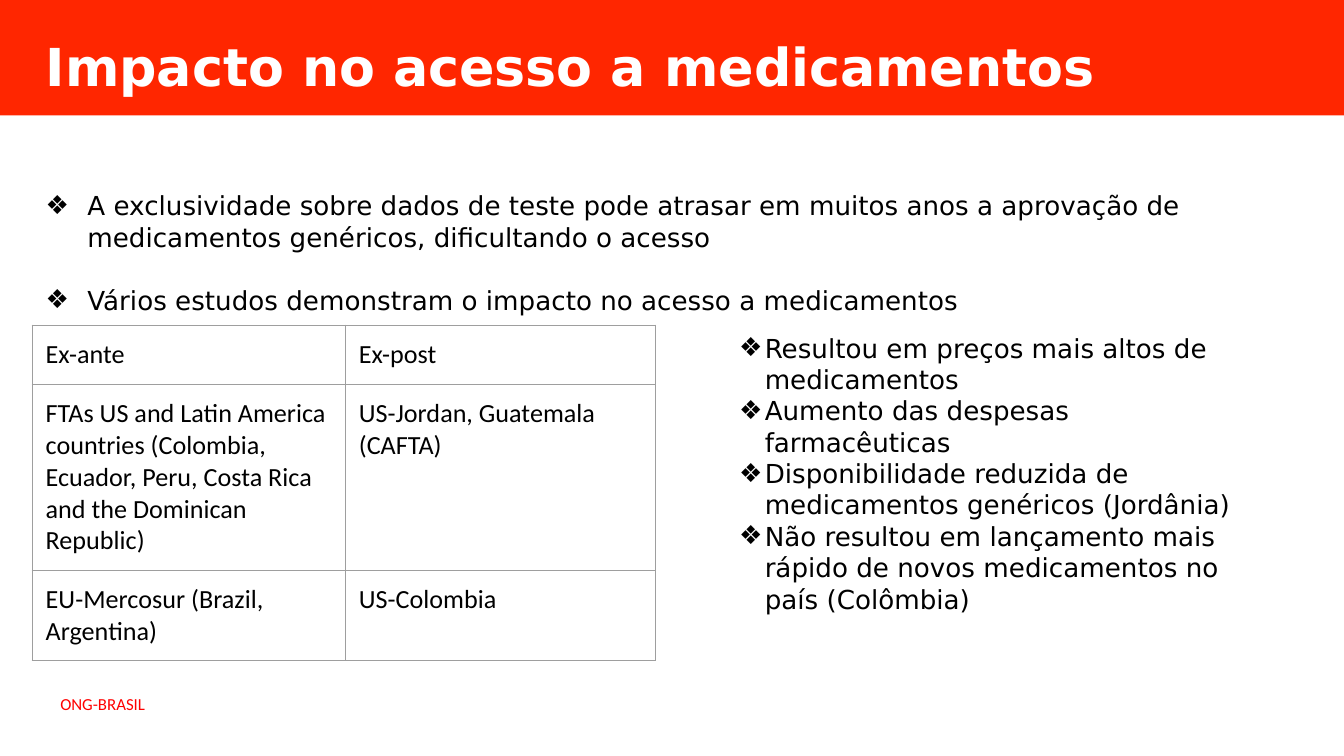
from lxml import etree
from pptx import Presentation
from pptx.dml.color import RGBColor
from pptx.enum.shapes import MSO_SHAPE
from pptx.enum.text import MSO_ANCHOR, MSO_AUTO_SIZE, PP_ALIGN
from pptx.oxml.ns import qn
from pptx.util import Inches, Pt

RECT = MSO_SHAPE.RECTANGLE
TOP, MIDDLE = MSO_ANCHOR.TOP, MSO_ANCHOR.MIDDLE
NO_FIT = MSO_AUTO_SIZE.NONE
LEFT = PP_ALIGN.LEFT

BAND_RED = RGBColor(0xFF, 0x26, 0x00)
FOOTER_RED = RGBColor(0xFF, 0x00, 0x00)
WHITE = RGBColor(0xFF, 0xFF, 0xFF)
BLACK = RGBColor(0x00, 0x00, 0x00)
GRID_GREY = RGBColor(0x9E, 0x9E, 0x9E)

HEADING_FONT = "DejaVu Sans"
TABLE_FONT = "Calibri"

MAIN_POINTS = [
    "A exclusividade sobre dados de teste pode atrasar em muitos anos a aprovação de "
    "medicamentos genéricos, dificultando o acesso ",
    "Vários estudos demonstram o impacto no acesso a medicamentos",
]
FINDINGS = [
    "Resultou em preços mais altos de medicamentos ",
    "Aumento das despesas farmacêuticas",
    "Disponibilidade reduzida de medicamentos genéricos (Jordânia) ",
    "Não resultou em lançamento mais rápido de novos medicamentos no país (Colômbia)",
]
STUDIES = [
    ("Ex-ante", "Ex-post"),
    ("FTAs US and Latin America countries (Colombia, Ecuador, Peru, Costa Rica "
     "and the Dominican Republic)", "US-Jordan, Guatemala (CAFTA)"),
    ("EU-Mercosur (Brazil, Argentina)", "US-Colombia"),
]
COLUMN_WIDTHS = [2.33, 2.31]
ROW_HEIGHTS = [0.44, 1.38, 0.67]


def add_bullet(p, indent):
    """Give a paragraph a black diamond bullet with a hanging indent."""
    pPr = p._p.get_or_add_pPr()
    pPr.set("marL", str(Inches(indent)))
    pPr.set("indent", str(-Inches(indent)))
    color = etree.SubElement(pPr, qn("a:buClr"))
    etree.SubElement(color, qn("a:srgbClr"), val=str(BLACK))
    etree.SubElement(pPr, qn("a:buChar"), char="❖")


def write_text(tf, lines, font=HEADING_FONT, size=14, color=BLACK, bold=False,
               indent=None, gap=0):
    """Write one paragraph per line, with optional bullets and gaps."""
    for i, line in enumerate(lines):
        p = tf.paragraphs[0] if i == 0 else tf.add_paragraph()
        if indent:
            add_bullet(p, indent)
        p.alignment = LEFT
        p.line_spacing = 1.0
        p.space_before = Pt(gap if i else 0)
        r = p.add_run()
        r.text = line
        r.font.name = font
        r.font.size = Pt(size)
        r.font.bold = bold
        r.font.color.rgb = color


def place_text(sp, x, y, w, h, lines, anchor=TOP, inset=0.05, **text_format):
    """Move a text shape, set up its frame and fill it."""
    sp.left, sp.top, sp.width, sp.height = map(Inches, (x, y, w, h))
    tf = sp.text_frame
    tf.word_wrap = True
    tf.auto_size = NO_FIT
    tf.vertical_anchor = anchor
    tf.margin_top = Inches(inset)
    write_text(tf, lines, **text_format)


def add_band(slide):
    """Add the red title band behind everything else."""
    sp = slide.shapes.add_shape(RECT, 0, 0, Inches(10), Inches(0.86))
    sp.shadow.inherit = False
    sp.fill.solid()
    sp.fill.fore_color.rgb = BAND_RED
    sp.line.fill.background()
    slide.shapes._spTree.insert(2, sp._element)


def add_borders(cell):
    """Draw a thin grey line on all four sides of a cell."""
    tcPr = cell._tc.get_or_add_tcPr()
    for side in ("lnL", "lnR", "lnT", "lnB"):
        ln = etree.SubElement(tcPr, qn(f"a:{side}"), w=str(Pt(0.75)))
        fill = etree.SubElement(ln, qn("a:solidFill"))
        etree.SubElement(fill, qn("a:srgbClr"), val=str(GRID_GREY))


def add_studies_table(slide, x, y):
    """Add the table of studies with plain bordered cells."""
    table = slide.shapes.add_table(
        len(ROW_HEIGHTS), len(COLUMN_WIDTHS), Inches(x), Inches(y),
        Inches(sum(COLUMN_WIDTHS)), Inches(sum(ROW_HEIGHTS))).table
    table.first_row = False
    table.horz_banding = False
    for column, width in zip(table.columns, COLUMN_WIDTHS):
        column.width = Inches(width)
    for row, height, texts in zip(table.rows, ROW_HEIGHTS, STUDIES):
        row.height = Inches(height)
        for cell, text in zip(row.cells, texts):
            add_borders(cell)
            cell.fill.background()
            cell.margin_left = cell.margin_right = Inches(0.1)
            cell.margin_top = cell.margin_bottom = Inches(0.1)
            write_text(cell.text_frame, [text], font=TABLE_FONT)


def main():
    """Build the slide and save it."""
    prs = Presentation()
    prs.slide_width, prs.slide_height = Inches(10), Inches(10 * 9 / 16)
    slide = prs.slides.add_slide(prs.slide_layouts[3])
    title, main_list, findings_list = slide.placeholders

    add_band(slide)
    footer = slide.shapes.add_textbox(0, 0, 0, 0)
    place_text(footer, 0.35, 5.11, 4.05, 0.25, ["ONG-BRASIL"],
               font=TABLE_FONT, size=9, color=FOOTER_RED)
    place_text(title, 0.24, 0.2, 8.8, 0.57, ["Impacto no acesso a medicamentos"],
               anchor=MIDDLE, size=28, color=WHITE, bold=True)
    place_text(main_list, 0.24, 1.12, 9.53, 3.3, MAIN_POINTS,
               inset=0.29, indent=0.31, gap=17)
    add_studies_table(slide, 0.24, 2.42)
    place_text(findings_list, 5.4, 2.42, 3.9, 2.46, FINDINGS, indent=0.19)

    prs.save("out.pptx")


if __name__ == "__main__":
    main()
